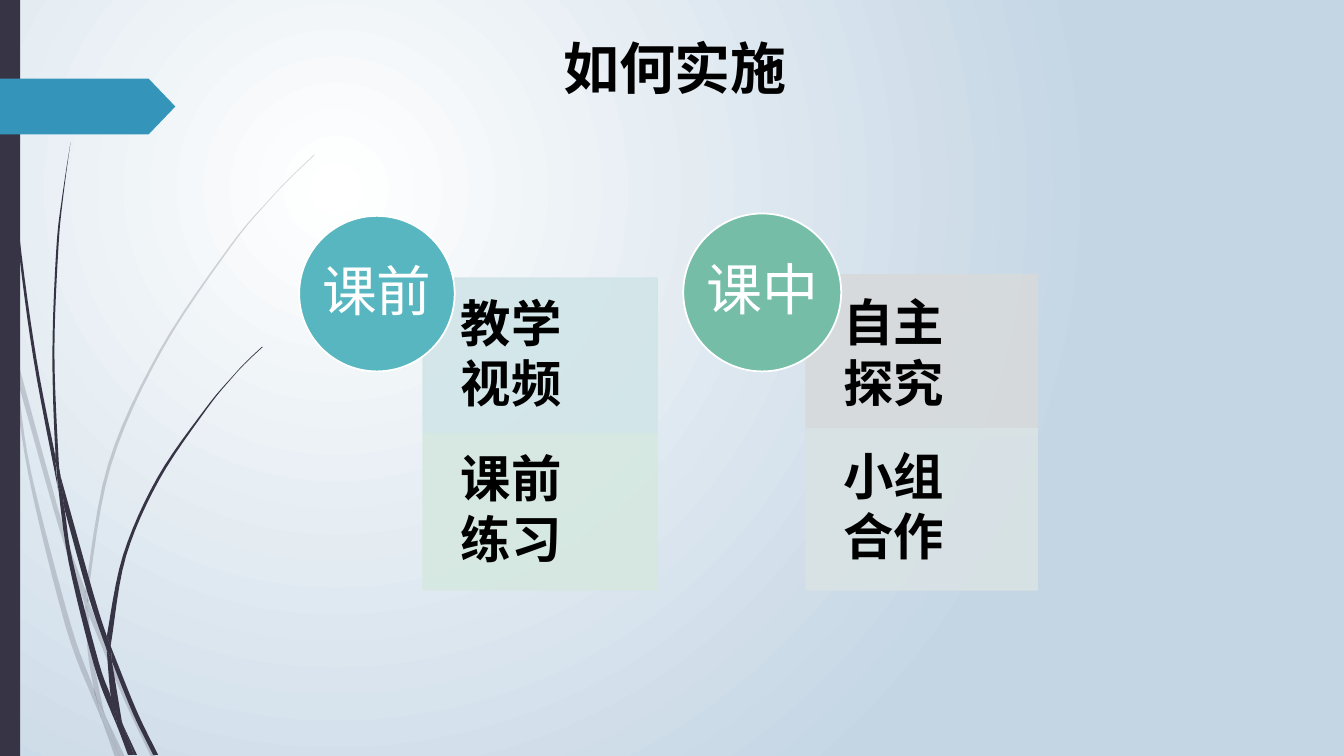
from lxml import etree
from pptx import Presentation
from pptx.dml.color import RGBColor
from pptx.enum.shapes import MSO_SHAPE
from pptx.enum.text import MSO_ANCHOR, PP_ALIGN
from pptx.oxml.ns import qn
from pptx.util import Cm, Pt

WHITE = RGBColor(0xFF, 0xFF, 0xFF)
BLACK = RGBColor(0, 0, 0)
MIST = RGBColor(0xC4, 0xD5, 0xE4)
DARK = RGBColor(0x37, 0x35, 0x45)
BLUE = RGBColor(0x34, 0x94, 0xBA)
TEAL = RGBColor(0x58, 0xB6, 0xC0)
GREEN = RGBColor(0x75, 0xBD, 0xA7)
PALE_TEAL = RGBColor(0xD1, 0xE5, 0xE8)
PALE_GREEN = RGBColor(0xD6, 0xE8, 0xE1)
PALE_GREY = RGBColor(0xD7, 0xDA, 0xDB)
PALE_BLUE = RGBColor(0xD9, 0xE3, 0xE5)
TITLE_FONT = "Noto Sans CJK SC"
BODY_FONT = "TeX Gyre Adventor"
GRASS_UNIT = Cm(0.0254)

# Each grass segment is two edges that meet at their ends, in GRASS_UNIT
FAINT_GRASS = [
    ([(11, 350), (9, 322), (0, 282)], [(0, 299), (10, 344), (11, 350)]),
    ([(14, 345), (62, 520), (85, 586)], [(84, 599), (58, 522), (17, 376)]),
    ([(88, 596), (92, 607), (127, 692), (155, 751)], [(150, 751), (123, 694), (88, 610)]),
    ([(105, 711), (124, 751)], [(119, 751), (105, 711)]),
    ([(11, 350), (17, 376), (31, 469), (70, 619), (93, 683), (99, 707), (101, 714)],
     [(92, 693), (65, 621), (28, 470), (11, 350)]),
    ([(84, 599), (87, 646), (93, 683), (96, 692), (105, 711)],
     [(103, 706), (91, 646), (88, 610), (84, 599)]),
    ([(88, 596), (88, 584), (110, 462), (160, 349), (229, 245), (268, 198), (290, 175), (312, 154)],
     [(312, 153), (289, 175), (268, 197), (228, 244), (158, 348), (107, 461), (85, 584), (85, 586)]),
    ([(101, 714), (114, 751)], [(119, 751), (101, 714)]),
    ([(88, 608), (88, 596)], [(85, 586), (84, 599)]),
    ([(93, 683), (99, 707), (101, 714), (119, 751)], [(119, 751), (105, 711), (96, 692)]),
]
DARK_GRASS = [
    ([(3, 0), (4, 48), (7, 110), (17, 233), (33, 355), (56, 477), (57, 481)],
     [(55, 457), (55, 453), (36, 355), (19, 232), (8, 109), (5, 48), (4, 0)]),
    ([(60, 472), (93, 590), (106, 631)], [(106, 645), (88, 592), (64, 505)]),
    ([(110, 641), (113, 649), (136, 706), (157, 749)], [(152, 749), (132, 708), (111, 656)]),
    ([(57, 477), (64, 505), (72, 556), (98, 657), (110, 691), (116, 717), (117, 722)],
     [(111, 708), (93, 659), (68, 557), (57, 477)]),
    ([(60, 472), (58, 453), (54, 349), (58, 245), (63, 193), (70, 141)],
     [(70, 141), (62, 193), (56, 245), (52, 349), (55, 449), (60, 472)]),
    ([(122, 719), (133, 749)], [(136, 749), (122, 719)]),
    ([(55, 449), (60, 472), (64, 505)], [(57, 477), (55, 453)]),
    ([(110, 641), (111, 633), (125, 552), (158, 476), (205, 406), (231, 374), (245, 359), (261, 344)],
     [(260, 344), (245, 358), (231, 373), (204, 405), (156, 474), (122, 551), (106, 631)]),
    ([(117, 722), (127, 749)], [(131, 749), (117, 722)]),
    ([(106, 645), (110, 691), (116, 706), (122, 719)],
     [(121, 716), (111, 656), (109, 651), (106, 645)]),
    ([(106, 645), (109, 651), (111, 656)], [(110, 641), (106, 631)]),
    ([(110, 691), (116, 717), (117, 722), (130, 749)], [(133, 749), (122, 719), (116, 706)]),
]


def smooth(edge, steps=6):
    """Points of a Catmull-Rom curve through the edge."""
    padded = [edge[0], *edge, edge[-1]]
    curve = [edge[0]]
    for a, b, c, d in zip(padded, padded[1:], padded[2:], padded[3:]):
        for step in range(1, steps + 1):
            t = step / steps
            curve.append(tuple(
                (2 * q + (r - p) * t + (2 * p - 5 * q + 4 * r - s) * t ** 2
                 + (3 * q - p - 3 * r + s) * t ** 3) / 2
                for p, q, r, s in zip(a, b, c, d)))
    return curve


def set_alpha(shape, percent):
    for color in shape._element.spPr.iter(qn("a:srgbClr")):
        etree.SubElement(color, qn("a:alpha"), val=str(percent * 1000))


def paint(shape, fill, line=None, alpha=100):
    shape.shadow.inherit = False
    shape.fill.solid()
    shape.fill.fore_color.rgb = fill
    if line is None:
        shape.line.fill.background()
    else:
        shape.line.color.rgb = line
        shape.line.width = Pt(1.25)
    if alpha < 100:
        set_alpha(shape, alpha)


def add_preset(slide, kind, left, top, width, height, fill, **look):
    shape = slide.shapes.add_shape(kind, Cm(left), Cm(top), Cm(width), Cm(height))
    paint(shape, fill, **look)
    return shape


def add_grass(slide, segments, alpha):
    grass = slide.shapes.add_group_shape()
    for edges in segments:
        outline = [(x * GRASS_UNIT, y * GRASS_UNIT) for edge in edges for x, y in smooth(edge)]
        builder = grass.shapes.build_freeform(*outline[0])
        builder.add_line_segments(outline[1:], close=True)
        paint(builder.convert_to_shape(), DARK, alpha=alpha)


def write(shape, text, *, size, font=BODY_FONT, color=BLACK, bold=False, align=PP_ALIGN.LEFT,
          anchor=MSO_ANCHOR.MIDDLE, insets=(0.25, 0.13), wrap=True, line_spacing=None,
          space_after=None, outline=None):
    frame = shape.text_frame
    frame.word_wrap = wrap
    frame.vertical_anchor = anchor
    frame.margin_left, frame.margin_top = Cm(insets[0]), Cm(insets[1])
    frame.margin_right = frame.margin_bottom = Cm(insets[1])
    for index, line in enumerate(text.split("\n")):
        paragraph = frame.add_paragraph() if index else frame.paragraphs[0]
        paragraph.alignment = align
        paragraph.line_spacing = line_spacing
        paragraph.space_after = space_after
        run = paragraph.add_run()
        run.text = line
        run.font.size, run.font.bold, run.font.name = Pt(size), bold, font
        run.font.color.rgb = color
        properties = run.font._element
        etree.SubElement(properties, qn("a:ea"), typeface=font)
        if outline is not None:
            edge = etree.Element(qn("a:ln"), w=str(Pt(1.4)))
            solid = etree.SubElement(edge, qn("a:solidFill"))
            etree.SubElement(solid, qn("a:srgbClr"), val=str(outline))
            properties.insert(0, edge)


def add_background(slide):
    fill = slide.background.fill
    fill.gradient()
    for stop, color in zip(fill.gradient_stops, (WHITE, MIST)):
        stop.color.rgb = color
    gradient = next(slide._element.iter(qn("a:gradFill")))
    gradient.remove(gradient.find(qn("a:lin")))
    circle = etree.SubElement(gradient, qn("a:path"), path="circle")
    etree.SubElement(circle, qn("a:fillToRect"), l="50000", t="50000", r="100000", b="100000")


def add_stage(slide, name, tasks, *, left, top, width, height, step, insets,
              circle, circle_color, name_size):
    spacing = dict(line_spacing=0.9, space_after=Pt(4.5))
    for row, (task, color) in enumerate(tasks):
        panel = add_preset(slide, MSO_SHAPE.RECTANGLE, left, top + row * step, width, height,
                           color, line=color, alpha=90)
        write(panel, task, size=36, bold=True, insets=insets, **spacing)
    x, y, diameter = circle
    badge = add_preset(slide, MSO_SHAPE.OVAL, x, y, diameter, diameter, circle_color, line=WHITE)
    write(badge, name, size=name_size, color=WHITE, align=PP_ALIGN.CENTER,
          insets=(0.57, 0.57), wrap=False, **spacing)


def main():
    deck = Presentation()
    deck.slide_width, deck.slide_height = Cm(33.87), Cm(19.05)
    slide = deck.slides.add_slide(deck.slide_layouts[6])

    # Backdrop: gradient, grass, side bar and page tag
    add_background(slide)
    add_grass(slide, FAINT_GRASS, alpha=20)
    add_grass(slide, DARK_GRASS, alpha=100)
    add_preset(slide, MSO_SHAPE.RECTANGLE, 0, 0, 0.51, 19.05, DARK)
    tag = add_preset(slide, MSO_SHAPE.PENTAGON, 0, 1.98, 4.42, 1.41, BLUE)
    tag.adjustments[0] = 0.48

    # Title
    title = slide.shapes.add_textbox(Cm(6.32), Cm(0.71), Cm(21.26), Cm(2.21))
    write(title, "如何实施", size=40, font=TITLE_FONT, bold=True, align=PP_ALIGN.CENTER,
          anchor=MSO_ANCHOR.TOP, outline=WHITE)

    # Stages before and during class
    add_stage(slide, "课前", [("教学\n视频", PALE_TEAL), ("课前\n练习", PALE_GREEN)],
              left=10.67, top=7.01, width=5.89, height=3.93, step=3.92, insets=(0.94, 0.56),
              circle=(7.54, 5.44, 3.92), circle_color=TEAL, name_size=39)
    add_stage(slide, "课中", [("自主\n探究", PALE_GREY), ("小组\n合作", PALE_BLUE)],
              left=20.32, top=6.93, width=5.82, height=4.06, step=3.87, insets=(0.94, 0.94),
              circle=(17.22, 5.38, 3.98), circle_color=GREEN, name_size=40)

    deck.save("out.pptx")


if __name__ == "__main__":
    main()
